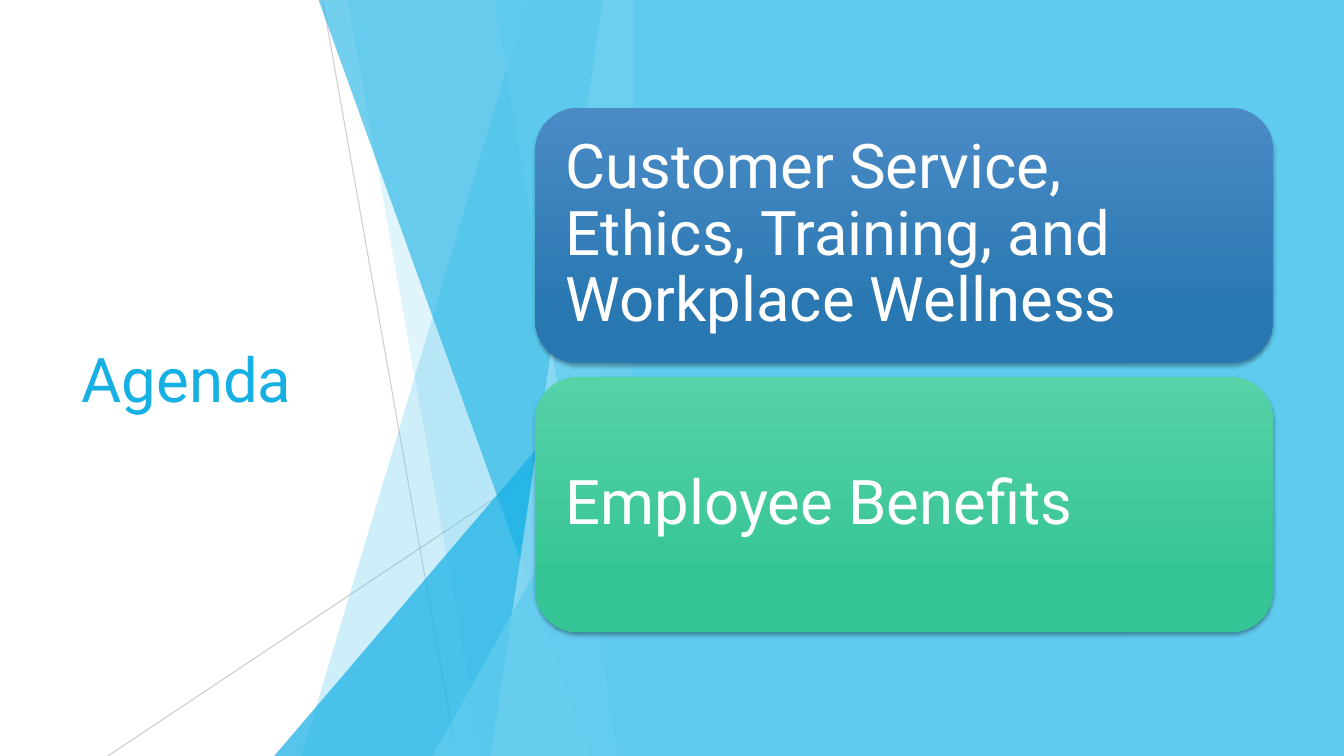
from lxml import etree
from pptx import Presentation
from pptx import util as u
from pptx.dml.color import RGBColor
from pptx.enum import shapes, text
from pptx.oxml import ns

WIDTH, HEIGHT = 13.33, 7.5
SPLIT = 6.28  # left edge of the solid panel, where all facets end
FONT = "Roboto"

WHITE = RGBColor(0xFF, 0xFF, 0xFF)
GREY = RGBColor(0xBF, 0xBF, 0xBF)
SKY = RGBColor(0x5F, 0xCB, 0xEF)
PALE = RGBColor(0x9F, 0xE0, 0xF5)
AZURE = RGBColor(0x17, 0xB0, 0xE4)
BLUES = RGBColor(0x4A, 0x8B, 0xC6), RGBColor(0x2A, 0x78, 0xB2)
GREENS = RGBColor(0x56, 0xD2, 0xA7), RGBColor(0x36, 0xC5, 0x96)

CARDS = [
    ("Customer Service, Ethics, Training, and Workplace Wellness", BLUES),
    ("Employee Benefits", GREENS),
]
CARD_LEFT, CARD_TOP, CARD_WIDTH, CARD_HEIGHT, CARD_STEP = 5.31, 1.07, 7.32, 2.53, 2.67


def inches(*lengths):
    return [u.Inches(length) for length in lengths]


def set_opacity(shape, percent):
    color = shape.element.spPr.find(".//" + ns.qn("a:srgbClr"))
    etree.SubElement(color, ns.qn("a:alpha"), val=str(percent * 1000))


def paint(shape, color, opacity=100):
    shape.shadow.inherit = False
    shape.fill.solid()
    shape.fill.fore_color.rgb = color
    shape.line.fill.background()
    if opacity < 100:
        set_opacity(shape, opacity)


def add_hairline(page, start, end, opacity):
    line = page.shapes.add_connector(
        shapes.MSO_CONNECTOR.STRAIGHT, *inches(*start, *end))
    line.line.color.rgb = GREY
    line.line.width = u.Pt(0.75)
    set_opacity(line, opacity)
    etree.SubElement(line.element.spPr, ns.qn("a:effectLst"))


def add_pane(page, top_x, bottom_x, color, opacity):
    """Full-height facet with a slanted left edge."""
    builder = page.shapes.build_freeform(*inches(top_x, 0))
    corners = [(SPLIT, 0), (SPLIT, HEIGHT), (bottom_x, HEIGHT)]
    builder.add_line_segments([inches(*corner) for corner in corners], close=True)
    paint(builder.convert_to_shape(), color, opacity)


def add_wedge(page, left, top, color, opacity):
    """Triangle rising to the split, standing on the bottom edge."""
    wedge = page.shapes.add_shape(
        shapes.MSO_SHAPE.ISOSCELES_TRIANGLE,
        *inches(left, top, SPLIT - left, HEIGHT - top))
    wedge.adjustments[0] = 1
    paint(wedge, color, opacity)


def add_soft_shadow(shape):
    shape.shadow.inherit = False
    effects = shape.element.spPr.find(ns.qn("a:effectLst"))
    shadow = etree.SubElement(
        effects, ns.qn("a:outerShdw"), blurRad=str(u.Pt(3)), dist=str(u.Pt(2)),
        dir="5400000", algn="ctr", rotWithShape="0")
    color = etree.SubElement(shadow, ns.qn("a:srgbClr"), val="000000")
    etree.SubElement(color, ns.qn("a:alpha"), val="35000")


def add_card(page, row, label, colors):
    card = page.shapes.add_shape(
        shapes.MSO_SHAPE.ROUNDED_RECTANGLE,
        *inches(CARD_LEFT, CARD_TOP + row * CARD_STEP, CARD_WIDTH, CARD_HEIGHT))
    card.fill.gradient()
    card.fill.gradient_angle = 270
    for stop, position, color in zip(card.fill.gradient_stops, (0, 0.78), colors):
        stop.position = position
        stop.color.rgb = color
    card.line.fill.background()
    add_soft_shadow(card)
    frame = card.text_frame
    frame.word_wrap = True
    frame.vertical_anchor = text.MSO_ANCHOR.MIDDLE
    frame.margin_left = frame.margin_right = u.Inches(0.18)
    frame.margin_top = frame.margin_bottom = u.Inches(0.18)
    write(frame, label, WHITE)
    frame.paragraphs[0].line_spacing = 0.9


def write(frame, words, color):
    frame.text = words
    para = frame.paragraphs[0]
    para.alignment = text.PP_ALIGN.LEFT
    para.font.name = FONT
    para.font.size = u.Pt(44)
    para.font.color.rgb = color


def add_title(page, words):
    title = page.shapes.title
    title.left, title.top, title.width, title.height = inches(0.71, 1.51, 3.88, 4.48)
    title.text_frame.vertical_anchor = text.MSO_ANCHOR.MIDDLE
    write(title.text_frame, words, AZURE)


def main():
    deck = Presentation()
    deck.slide_width, deck.slide_height = inches(WIDTH, HEIGHT)
    page = deck.slides.add_slide(deck.slide_layouts[5])
    add_title(page, "Agenda")

    # Faceted edge between the white side and the panel
    add_hairline(page, (3.2, 0), (4.53, HEIGHT), 75)
    add_hairline(page, (SPLIT, 4.03), (1.07, HEIGHT), 80)
    add_pane(page, 5.23, 2.99, SKY, 30)
    add_pane(page, 3.45, 4.78, SKY, 20)
    add_wedge(page, 2.72, 3.33, AZURE, 72)
    add_pane(page, 3.16, 5.86, AZURE, 60)
    add_pane(page, 5.98, 4.87, PALE, 70)
    add_pane(page, 4.91, 6.13, SKY, 65)
    add_wedge(page, 4.29, 3.93, SKY, 80)

    # Solid panel
    panel = page.shapes.add_shape(
        shapes.MSO_SHAPE.RECTANGLE, *inches(SPLIT, 0, WIDTH - SPLIT, HEIGHT))
    paint(panel, SKY)

    # Agenda items
    for row, (label, colors) in enumerate(CARDS):
        add_card(page, row, label, colors)

    deck.save("out.pptx")


if __name__ == "__main__":
    main()
